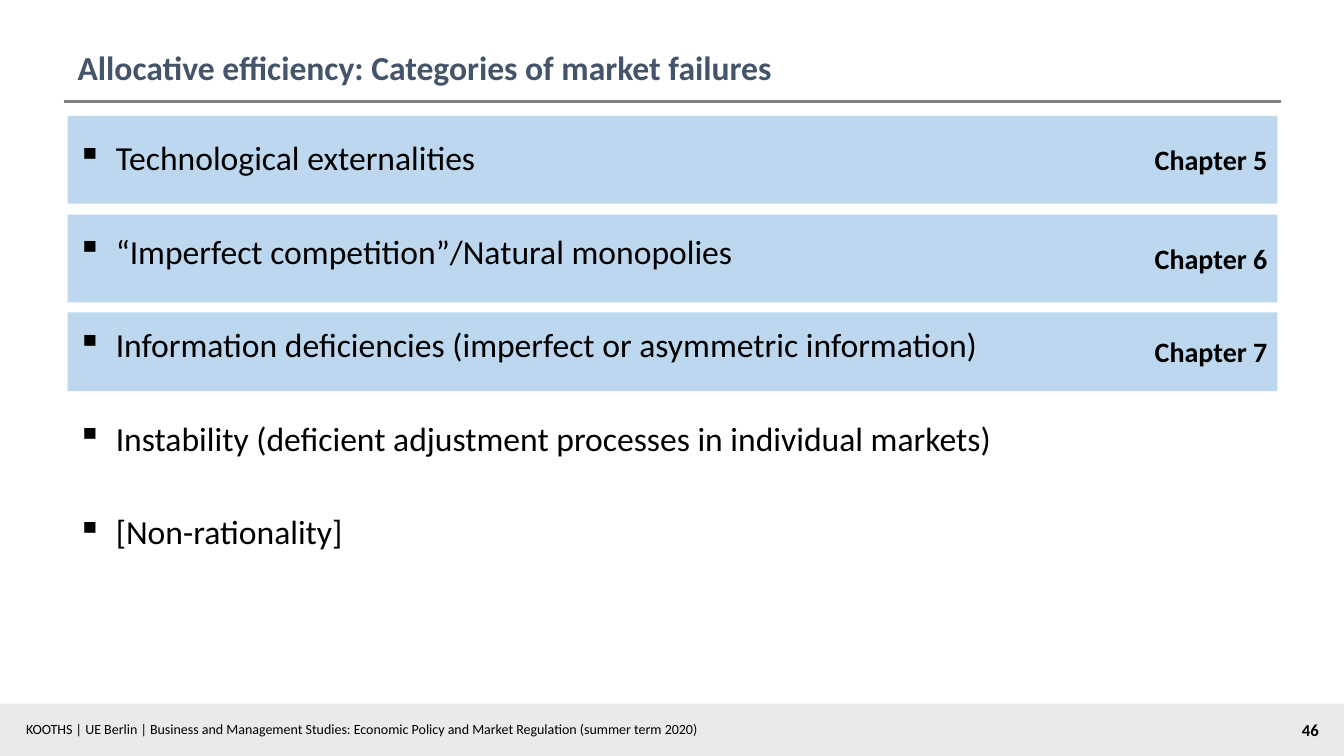
from lxml import etree
from pptx import Presentation
from pptx import util as u
from pptx.dml.color import RGBColor
from pptx.enum import shapes, text
from pptx.oxml.ns import qn

BLACK = RGBColor(0x00, 0x00, 0x00)
SLATE = RGBColor(0x44, 0x54, 0x6A)
GRAY = RGBColor(0x80, 0x80, 0x80)
PALE_GRAY = RGBColor(0xEA, 0xEA, 0xEA)
PALE_BLUE = RGBColor(0xBD, 0xD7, 0xEE)

TITLE = "Allocative efficiency: Categories of market failures"
FOOTER = ("KOOTHS | UE Berlin | Business and Management Studies: "
          "Economic Policy and Market Regulation (summer term 2020)")
CHAPTERS = [("Chapter 5", 0, 0.87), ("Chapter 6", 0.98, 0.87), ("Chapter 7", 1.95, 0.78)]
FAILURES = [
    "Technological externalities",
    "“Imperfect competition”/Natural monopolies",
    "Information deficiencies (imperfect or asymmetric information)",
    "Instability (deficient adjustment processes in individual markets)",
    "[Non-rationality]",
]


def inches(box):
    """Convert a box of numbers to lengths."""
    return [u.Inches(value) for value in box]


def style(target, **formats):
    """Set each given attribute on the target."""
    for name, value in formats.items():
        setattr(target, name, value)


def write(para, words, size, color=BLACK, bold=False, align=text.PP_ALIGN.LEFT):
    """Fill a paragraph with formatted words."""
    para.alignment = align
    span = para.add_run()
    span.text = words
    style(span.font, name="Calibri", size=u.Pt(size), bold=bold)
    span.font.color.rgb = color


def add_frame(page, box):
    """Add a wrapping text box and return its text frame."""
    frame = page.shapes.add_textbox(*inches(box)).text_frame
    frame.word_wrap = True
    return frame


def add_band(page, box, color):
    """Add a plain filled rectangle."""
    band = page.shapes.add_shape(shapes.MSO_SHAPE.RECTANGLE, *inches(box))
    band.shadow.inherit = False
    band.fill.solid()
    band.fill.fore_color.rgb = color
    band.line.fill.background()
    return band


def add_header(page, box):
    """Place the title and the rule below it."""
    left, top, width, height = box
    title = page.shapes.title
    style(title, **dict(zip(("left", "top", "width", "height"), inches(box))))
    style(title.text_frame, vertical_anchor=text.MSO_ANCHOR.BOTTOM,
          auto_size=text.MSO_AUTO_SIZE.NONE, word_wrap=True)
    write(title.text_frame.paragraphs[0], TITLE, 24, SLATE, True)
    rule_top = top + height + 0.09
    rule = page.shapes.add_connector(
        shapes.MSO_CONNECTOR.STRAIGHT,
        *inches((left - 0.04, rule_top, left + width + 0.04, rule_top)))
    rule.line.color.rgb = GRAY
    rule.line.width = u.Pt(2.25)
    etree.SubElement(rule._element.spPr, qn("a:effectLst"))


def add_chapters(page, box):
    """Place the highlighted chapter bands."""
    left, top, width, _ = box
    for label, offset, height in CHAPTERS:
        band = add_band(page, (left, top + offset, width, height), PALE_BLUE)
        band.text_frame.vertical_anchor = text.MSO_ANCHOR.MIDDLE
        write(band.text_frame.paragraphs[0], label, 20, bold=True, align=text.PP_ALIGN.RIGHT)


def add_failures(page, box):
    """Place the bulleted list of market failures."""
    frame = add_frame(page, box)
    for index, failure in enumerate(FAILURES):
        para = frame.add_paragraph() if index else frame.paragraphs[0]
        properties = para._p.get_or_add_pPr()
        properties.set("marL", str(u.Inches(0.38)))
        properties.set("indent", str(u.Inches(-0.38)))
        etree.SubElement(properties, qn("a:buChar")).set("char", "▪")
        if index:
            para.space_before = u.Pt(38)
        write(para, failure, 24)


def add_footer(page, box):
    """Place the footer band, the course line and the page number."""
    left, top, width, _ = box
    add_band(page, box, PALE_GRAY)
    course = add_frame(page, (left + 0.16, top + 0.12, 10.17, 0.27))
    write(course.paragraphs[0], FOOTER, 10)
    number = add_frame(page, (left + width - 2.25, top + 0.11, 2.1, 0.3))
    write(number.paragraphs[0], "46", 12, bold=True, align=text.PP_ALIGN.RIGHT)


def main():
    """Build and save the deck."""
    deck = Presentation()
    style(deck, slide_width=u.Inches(13.33), slide_height=u.Inches(7.5))
    page = deck.slides.add_slide(deck.slide_layouts[5])
    add_footer(page, (0, 6.98, 13.33, 0.52))
    add_header(page, (0.67, 0.21, 12, 0.71))
    add_chapters(page, (0.67, 1.15, 12, 2.73))
    add_failures(page, (0.67, 1.31, 12, 5.39))
    deck.save("out.pptx")


if __name__ == "__main__":
    main()
